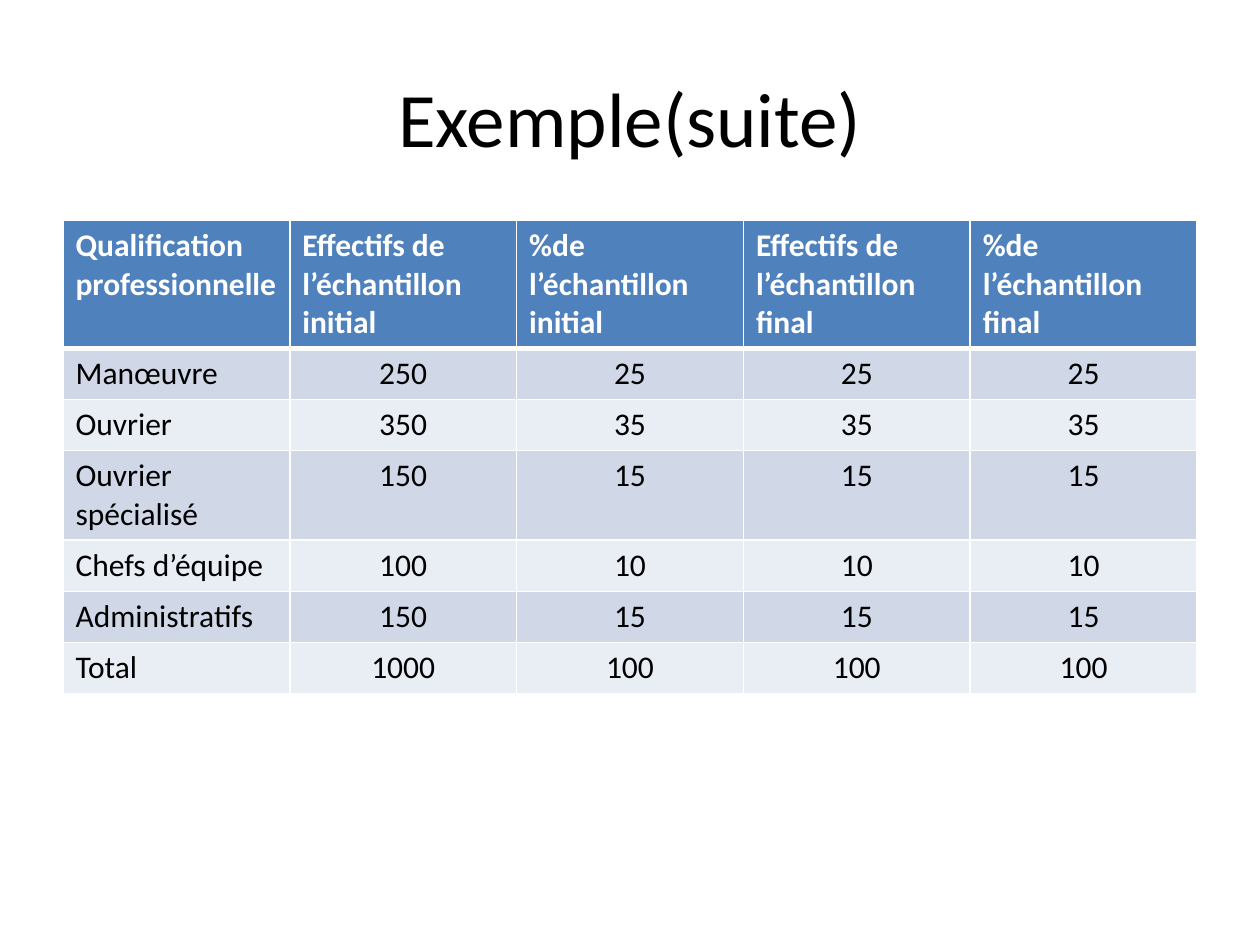
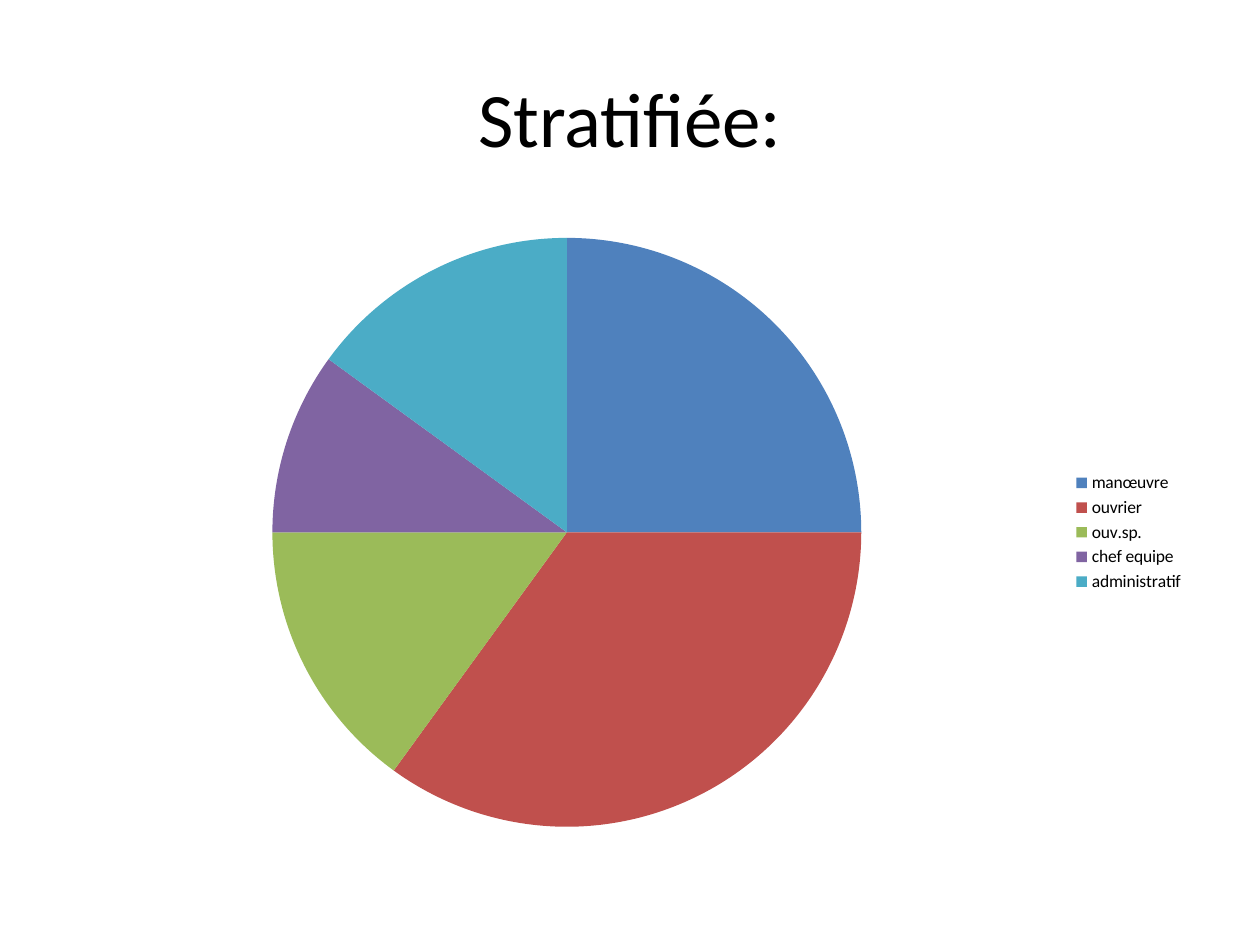
from collections import namedtuple
from dataclasses import dataclass

from lxml.etree import SubElement
from pptx import Presentation
from pptx.chart.data import CategoryChartData
from pptx.dml.color import RGBColor
from pptx.enum.chart import XL_CHART_TYPE, XL_LEGEND_POSITION
from pptx.enum.text import MSO_ANCHOR, PP_ALIGN
from pptx.oxml.ns import qn
from pptx.util import Pt

Box = namedtuple("Box", "left top width height")


@dataclass(frozen=True)
class Theme:
    font: str = "Calibri"
    text: str = "000000"
    white: str = "FFFFFF"
    header: str = "4F81BD"
    bands: tuple = ("D0D8E8", "E9EDF4")
    slices: tuple = ("4F81BD", "C0504D", "9BBB59", "8064A2", "4BACC6")
    title_size: int = 44
    table_size: int = 18
    chart_size: int = 10


THEME = Theme()
TITLE_BOX = Box(36, 21.6, 648, 90)
TABLE_BOX = Box(36, 126, 648, 204.4)
CHART_BOX = Box(36, 126, 648, 356.4)

HEADERS = [
    "Qualification professionnelle",
    "Effectifs de l’échantillon initial",
    "%de l’échantillon initial",
    "Effectifs de l’échantillon final",
    "%de l’échantillon final",
]
STAFF = [
    ("Manœuvre", 250, 25, 25, 25),
    ("Ouvrier", 350, 35, 35, 35),
    ("Ouvrier spécialisé", 150, 15, 15, 15),
    ("Chefs d’équipe", 100, 10, 10, 10),
    ("Administratifs", 150, 15, 15, 15),
    ("Total", 1000, 100, 100, 100),
]
SHARES = {
    "manœuvre": 25,
    "ouvrier": 35,
    "ouv.sp.": 15,
    "chef equipe": 10,
    "administratif": 15,
}


def points(box):
    return [Pt(v) for v in box]


def style_font(font, size, color=THEME.text, bold=False):
    font.name = THEME.font
    font.size = Pt(size)
    font.bold = bold
    font.color.rgb = RGBColor.from_string(color)


def write(tf, text, size, align=PP_ALIGN.LEFT, **font_format):
    p = tf.paragraphs[0]
    p.alignment = align
    r = p.add_run()
    r.text = text
    style_font(r.font, size, **font_format)


def paint(fill, color):
    fill.solid()
    fill.fore_color.rgb = RGBColor.from_string(color)


def add_borders(cell, bottom=1):
    tc_pr = cell._tc.get_or_add_tcPr()
    for side, width in {"L": 1, "R": 1, "T": 1, "B": bottom}.items():
        ln = SubElement(tc_pr, qn(f"a:ln{side}"), w=str(Pt(width)))
        fill = SubElement(ln, qn("a:solidFill"))
        SubElement(fill, qn("a:srgbClr"), val=THEME.white)


def add_titled_slide(prs, title):
    s = prs.slides.add_slide(prs.slide_layouts[5])
    paint(s.background.fill, THEME.white)
    sp = s.shapes.title
    sp.left, sp.top, sp.width, sp.height = points(TITLE_BOX)
    sp.text_frame.vertical_anchor = MSO_ANCHOR.MIDDLE
    write(sp.text_frame, title, THEME.title_size, align=PP_ALIGN.CENTER)
    return s


def add_staff_table(s, box):
    rows = [HEADERS, *STAFF]
    table = s.shapes.add_table(len(rows), len(HEADERS), *points(box)).table
    for column in table.columns:
        column.width = Pt(box.width / len(HEADERS))
    for i, values in enumerate(rows):
        is_header = i == 0
        table.rows[i].height = Pt(box.height / len(rows))
        for j, value in enumerate(values):
            cell = table.cell(i, j)
            add_borders(cell, bottom=3 if is_header else 1)
            paint(cell.fill, THEME.header if is_header else THEME.bands[(i - 1) % 2])
            write(
                cell.text_frame,
                str(value),
                THEME.table_size,
                align=PP_ALIGN.LEFT if is_header or j == 0 else PP_ALIGN.CENTER,
                color=THEME.white if is_header else THEME.text,
                bold=is_header,
            )


def add_share_pie(s, box):
    data = CategoryChartData()
    data.categories = list(SHARES)
    data.add_series("Series 1", list(SHARES.values()))
    chart = s.shapes.add_chart(XL_CHART_TYPE.PIE, *points(box), data).chart
    style_font(chart.font, THEME.chart_size)
    chart.has_title = False
    chart.has_legend = True
    chart.legend.position = XL_LEGEND_POSITION.RIGHT
    chart.legend.include_in_layout = False
    plot = chart.plots[0]
    plot.vary_by_categories = True
    for i, color in enumerate(THEME.slices):
        paint(plot.series[0].points[i].format.fill, color)


def main():
    prs = Presentation()
    prs.slide_width, prs.slide_height = Pt(720), Pt(540)
    add_staff_table(add_titled_slide(prs, "Exemple(suite)"), TABLE_BOX)
    add_share_pie(add_titled_slide(prs, "Stratifiée:"), CHART_BOX)
    prs.save("out.pptx")


if __name__ == "__main__":
    main()
